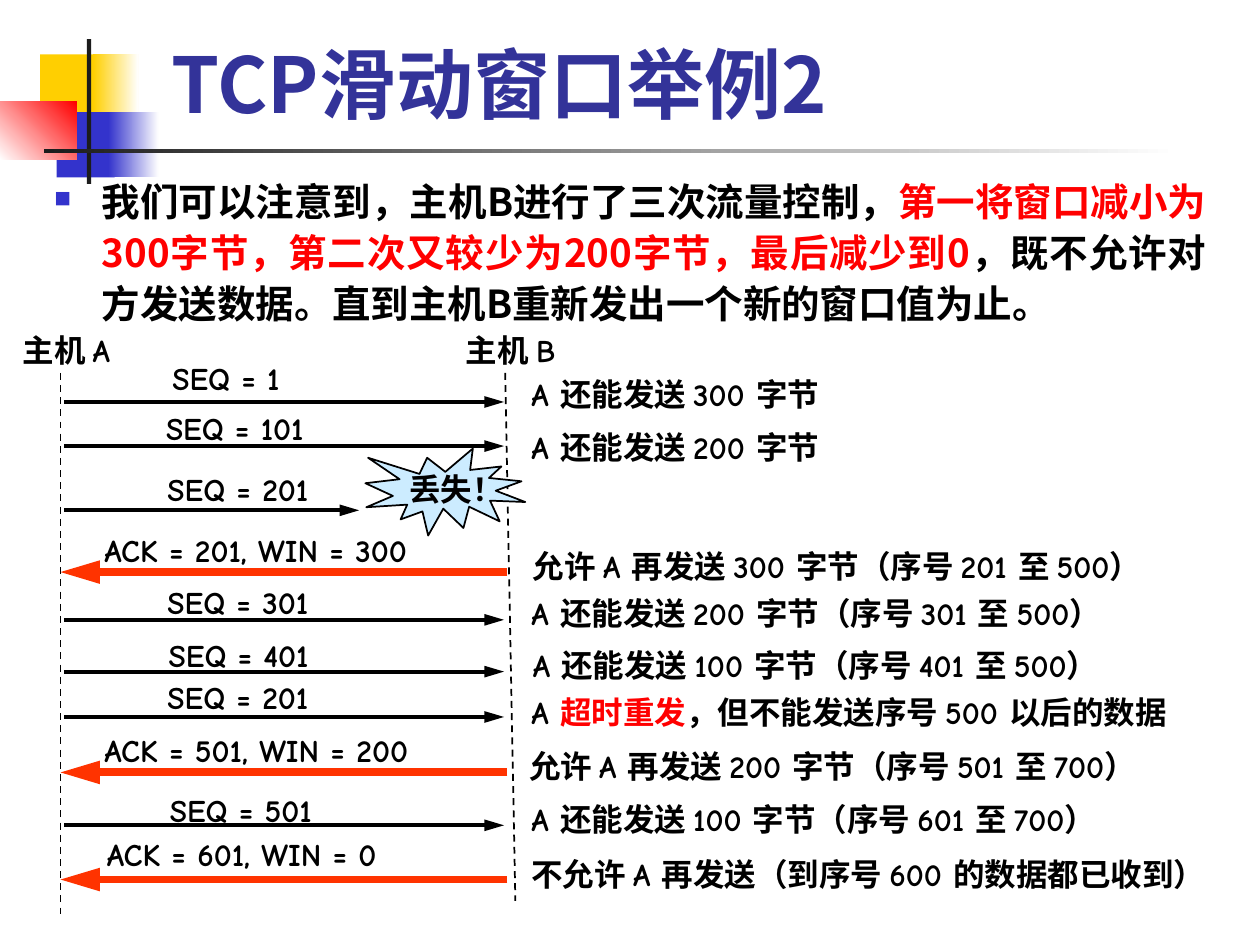
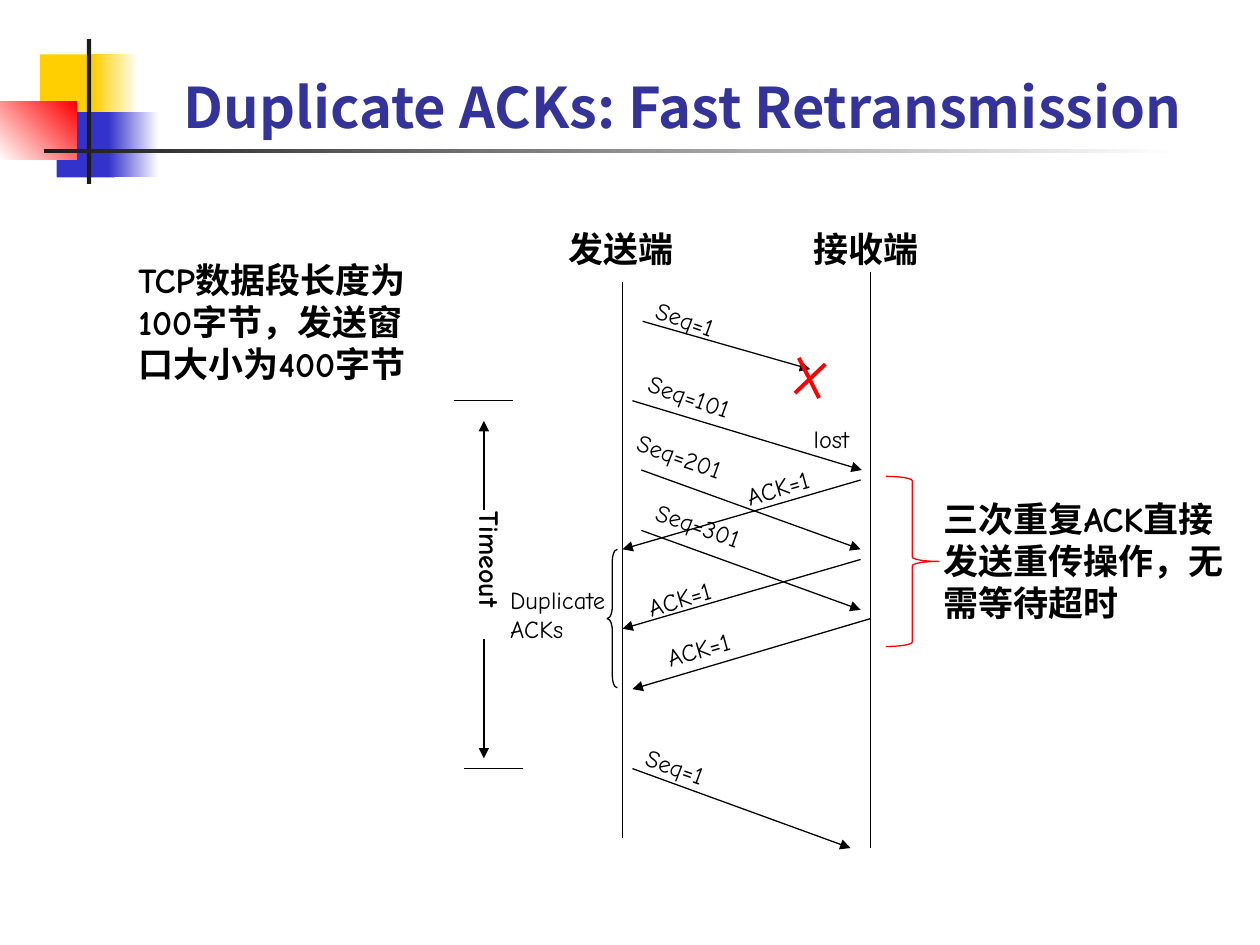
import pptx
import pptx.dml.color
import pptx.enum.dml
import pptx.enum.shapes
import pptx.enum.text
import pptx.oxml.ns
import pptx.util
from lxml import etree

Pt = pptx.util.Pt
MSO = pptx.enum.shapes.MSO_SHAPE
ALIGN = pptx.enum.text.PP_ALIGN
FIT = pptx.enum.text.MSO_AUTO_SIZE
qn = pptx.oxml.ns.qn

HUES = {
    "black": "000000", "white": "FFFFFF", "red": "FF0000", "gold": "FFCF01",
    "blue": "3333CC", "title": "333399", "ink": "1C1C1C", "ack": "FF3300",
    "ice": "CCECFF",
}
SANS = "Noto Sans CJK SC"
COMIC = "Comic Neue"


def rgb(hue):
    return pptx.dml.color.RGBColor.from_string(HUES[hue])


def sub(parent, tag, **attrs):
    return etree.SubElement(parent, qn(tag), attrs)


class Deck:
    def __init__(self):
        self.prs = pptx.Presentation()
        self.prs.slide_width, self.prs.slide_height = Pt(720), Pt(540)
        self.shapes = None

    def page(self, title, box, size):
        slide = self.prs.slides.add_slide(self.prs.slide_layouts[5])
        self.shapes = slide.shapes
        self.band()
        head = slide.shapes.title
        head.left, head.top, head.width, head.height = map(Pt, box)
        frame = head.text_frame
        frame.auto_size = FIT.NONE
        frame.vertical_anchor = pptx.enum.text.MSO_ANCHOR.BOTTOM
        self.words(frame, title, size, True, "title", SANS)

    def band(self):
        for box, hues, angle in (
            ((23, 31, 34.6, 37.4), ("gold",), 0),
            ((53.3, 31, 25.9, 37.4), ("gold", "white"), 0),
            ((32.4, 64, 33.1, 37.4), ("blue",), 0),
            ((61.9, 64, 28.8, 37.4), ("blue", "white"), 0),
            ((0, 58.3, 43.9, 33.1), ("white", "red"), 45),
            ((49.7, 22.3, 2.4, 82.8), ("ink",), 0),
            ((25.2, 85, 648, 2.4), ("ink", "white"), 0),
        ):
            block = self.shape(MSO.RECTANGLE, box, hues[0])
            if len(hues) == 2:
                block.fill.gradient()
                block.fill.gradient_angle = angle
                for stop, hue in zip(block.fill.gradient_stops, hues):
                    stop.color.rgb = rgb(hue)

    def shape(self, kind, box, fill=None, line=None, width=1):
        item = self.shapes.add_shape(kind, *map(Pt, box))
        item.shadow.inherit = False
        if fill:
            item.fill.solid()
            item.fill.fore_color.rgb = rgb(fill)
        else:
            item.fill.background()
        if line:
            item.line.color.rgb = rgb(line)
            item.line.width = Pt(width)
        else:
            item.line.fill.background()
        return item

    def words(self, frame, text, size, bold, hue, font):
        para = frame.paragraphs[0]
        para.alignment = para.alignment or ALIGN.LEFT
        runs = [(text, hue)] if isinstance(text, str) else text
        for part, tint in runs:
            run = para.add_run()
            run.text = part
            if len(runs) > 1:
                run.font.color.rgb = rgb(tint)
        style = para.font
        style.size, style.bold, style.name = Pt(size), bold, font
        style.color.rgb = rgb(hue)
        sub(para._p.pPr.find(qn("a:defRPr")), "a:ea", typeface=SANS)

    def text(self, text, box, size=18, bold=True, wrap=False, turn=0, fill=None):
        item = self.shapes.add_textbox(*map(Pt, box))
        item.rotation = turn
        if fill:
            item.fill.solid()
            item.fill.fore_color.rgb = rgb(fill)
        item.text_frame.word_wrap = wrap
        item.text_frame.auto_size = FIT.SHAPE_TO_FIT_TEXT
        self.words(item.text_frame, text, size, bold, "black", COMIC)

    def note(self, text, box, size=14, turn=0):
        self.text(text, box, size, size > 14, True, turn)

    def bullet(self, runs, box, size):
        item = self.shapes.add_textbox(*map(Pt, box))
        item.text_frame.word_wrap = True
        para = item.text_frame.paragraphs[0]
        para.alignment = ALIGN.JUSTIFY
        para.line_spacing = 1.1
        props = para._p.get_or_add_pPr()
        props.set("marL", str(Pt(27.4)))
        props.set("indent", str(-Pt(27.4)))
        sub(sub(props, "a:buClr"), "a:srgbClr", val=HUES["blue"])
        sub(props, "a:buSzPct", val="60000")
        sub(props, "a:buChar", char="■")
        self.words(item.text_frame, runs, size, True, "black", SANS)

    def line(self, ends, width=0.75, hue="black", dash=False, tip=None):
        item = self.shapes.add_connector(
            pptx.enum.shapes.MSO_CONNECTOR.STRAIGHT, *map(Pt, ends))
        item.line.width = Pt(width)
        item.line.color.rgb = rgb(hue)
        if dash:
            item.line.dash_style = pptx.enum.dml.MSO_LINE.DASH
        props = item._element.spPr
        if tip:
            sub(props.find(qn("a:ln")), "a:tailEnd", type="triangle", w="med", len=tip)
        sub(props, "a:effectLst")


def window(deck):
    deck.page("TCP滑动窗口举例2", (90.7, 16.6, 613.4, 60.5), 44)
    deck.bullet([
        ("我们可以注意到，主机B进行了三次流量控制，", "black"),
        ("第一将窗口减小为300字节，第二次又较少为200字节，最后减少到0", "red"),
        ("，既不允许对方发送数据。直到主机B重新发出一个新的窗口值为止。", "black"),
    ], (23.8, 95.8, 672.5, 102.2), 22)
    deck.line((288.7, 213.1, 294.5, 514.8), 1, dash=True)

    late = [("A ", "black"), ("超时重发", "red"),
            ("，但不能发送序号 500 以后的数据", "black")]
    for y, text, left, top, reply, x, base in (
        (229.7, "SEQ = 1", 91.4, 201.6, "A 还能发送 300 字节", 296.6, 211),
        (254.9, "SEQ = 101", 87.8, 230.4, "A 还能发送 200 字节", 296.6, 241.2),
        (291.6, "SEQ = 201", 88.6, 265, None, 0, 0),
        (326.9, "ACK = 201, WIN = 300", 52.6, 300.2,
         "允许 A 再发送 300 字节（序号 201 至 500）", 297.4, 308.9),
        (354.2, "SEQ = 301", 88.6, 329.8,
         "A 还能发送 200 字节（序号 301 至 500）", 296.6, 336.2),
        (383.8, "SEQ = 401", 89.3, 360,
         "A 还能发送 100 字节（序号 401 至 500）", 297.4, 365.8),
        (409.7, "SEQ = 201", 88.6, 383.8, late, 296.6, 392.4),
        (441.4, "ACK = 501, WIN = 200", 52.6, 414,
         "允许 A 再发送 200 字节（序号 501 至 700）", 295.2, 423.4),
        (471.6, "SEQ = 501", 90, 448.6,
         "A 还能发送 100 字节（序号 601 至 700）", 296.6, 453.6),
        (502.6, "ACK = 601, WIN = 0", 54, 473.8,
         "不允许 A 再发送（到序号 600 的数据都已收到）", 296.6, 485.3),
    ):
        if text.startswith("ACK"):
            deck.line((290, y, 34.6, y), 4.5, "ack", tip="lg")
            deck.text(text, (left, top, 229.7, 28.8))
        else:
            deck.line((36.7, y, 288 if reply else 205.2, y), 2.25, tip="lg")
            deck.text(text, (left, top, 114.5, 28.8))
        if reply:
            deck.text(reply, (x, base, 193.7 if y < 260 else 400, 28.8))

    deck.text("主机 A", (5.8, 185.8, 72, 28.8), fill="white")
    deck.text("主机 B", (259.2, 185.8, 69.8, 28.8))
    deck.shape(MSO.EXPLOSION1, (208.8, 256.3, 91.4, 49.7), "ice", "black")
    deck.text("丢失！", (226.8, 265, 69.1, 28.8))
    deck.line((34.6, 213.1, 34.6, 522), 1, dash=True)


def resend(deck):
    deck.page("Duplicate ACKs: Fast Retransmission", (97.9, 35.3, 673.9, 48.2), 32)
    for ends in ((355.7, 161.3, 355.7, 478.8), (497.5, 155.5, 497.5, 484.6),
                 (293, 229, 259.2, 229), (298.8, 439.2, 265, 439.2)):
        deck.line(ends)
    for ends in ((276.5, 291.6, 276.5, 240.5), (276.5, 365, 276.5, 433.4)):
        deck.line(ends, tip="med")

    for text, ends, left, top, wide in (
        ("Seq=1", (367.2, 183.6, 463, 211), 366.5, 176.4, 85),
        ("Seq=101", (361.4, 229, 492.5, 268.6), 361.4, 222.5, 111.6),
        ("ACK=1", (491.8, 274.3, 355.7, 313.9), 417.6, 256.3, 124.6),
        ("Seq=201", (366.5, 268.6, 491.8, 313.9), 355.7, 252, 85),
        ("ACK=1", (491.8, 319.7, 355.7, 359.3), 361.4, 319.7, 124.6),
        ("Seq=301", (366.5, 303.1, 491.8, 348.5), 366.5, 291.6, 85),
        ("ACK=1", (497.5, 353.5, 361.4, 393.8), 372.2, 348.5, 124.6),
        ("Seq=1", (361.4, 439.2, 486, 484.6), 360.7, 432, 85),
    ):
        deck.line(ends, tip="med")
        turn = 343.6 if text == "ACK=1" else 19.1
        deck.note(text, (left, top, wide, 23.8), turn=turn)

    for ends in ((471.6, 208.1, 454.3, 224.6), (456.5, 204.5, 468, 227.5)):
        deck.line(ends, 2.25, "red")
    deck.note("lost", (457.9, 239, 45.4, 23.8))
    deck.note("Timeout", (234.7, 317.5, 90.7, 26.6), 16, 90)
    deck.note("发送端", (317.5, 126.7, 85, 31), 20)
    deck.note("接收端", (457.9, 126.7, 85, 31), 20)
    deck.note("TCP数据段长度为100字节，发送窗口大小为400字节",
              (72, 144, 184.3, 79.2), 20)
    brace = deck.shape(MSO.LEFT_BRACE, (347, 313.9, 5.8, 79.2), None, "black", 0.75)
    brace.adjustments[0] = 1.18
    deck.note("Duplicate ACKs", (284.4, 330.5, 79.2, 41))
    deck.note("三次重复ACK直接发送重传操作，无需等待超时",
              (532.1, 280.8, 184.3, 79.9), 20)
    deck.shape(MSO.RIGHT_BRACE, (506.2, 272.2, 30.2, 97.2), None, "red", 0.75)


def main():
    deck = Deck()
    window(deck)
    resend(deck)
    deck.prs.save("out.pptx")


if __name__ == "__main__":
    main()
